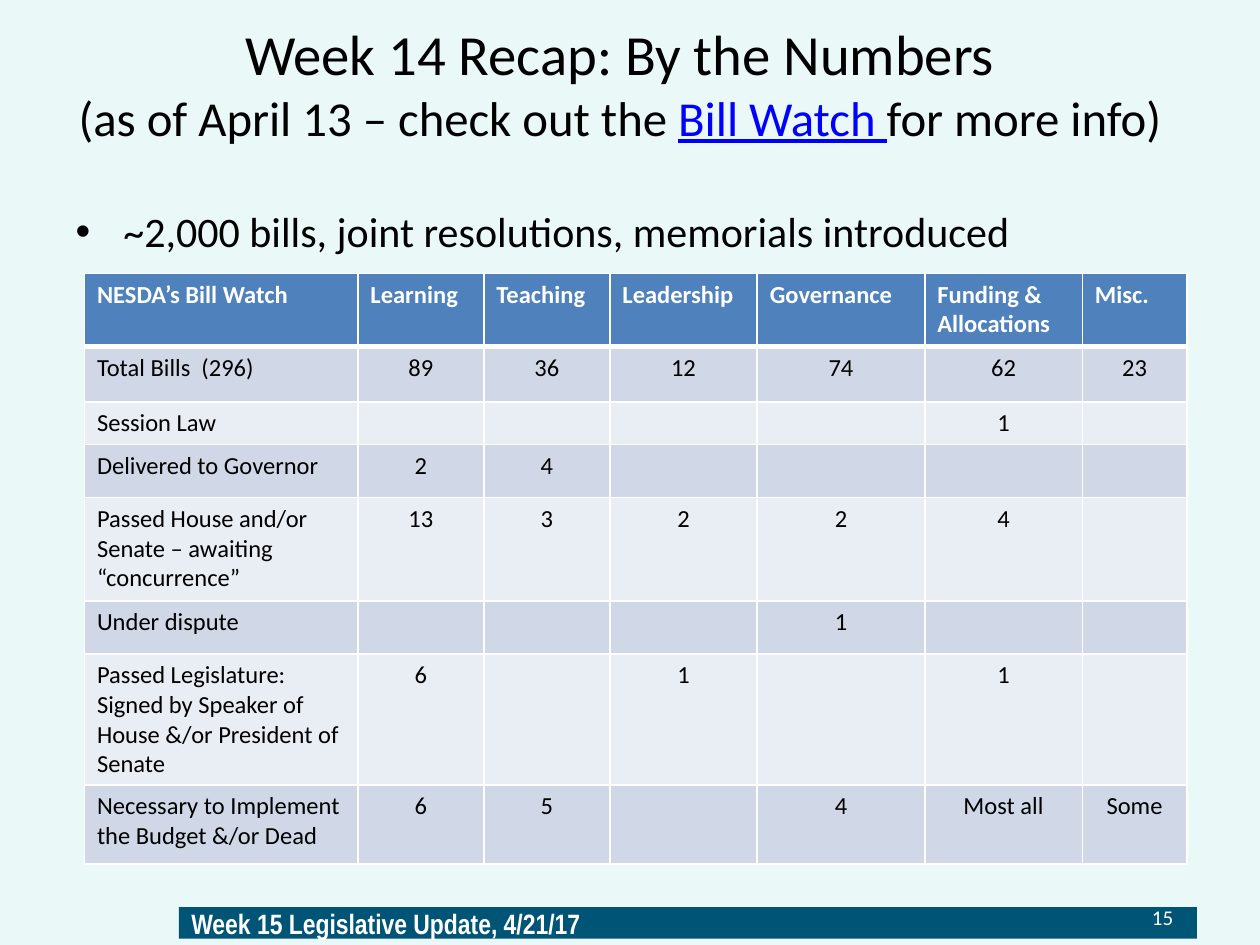
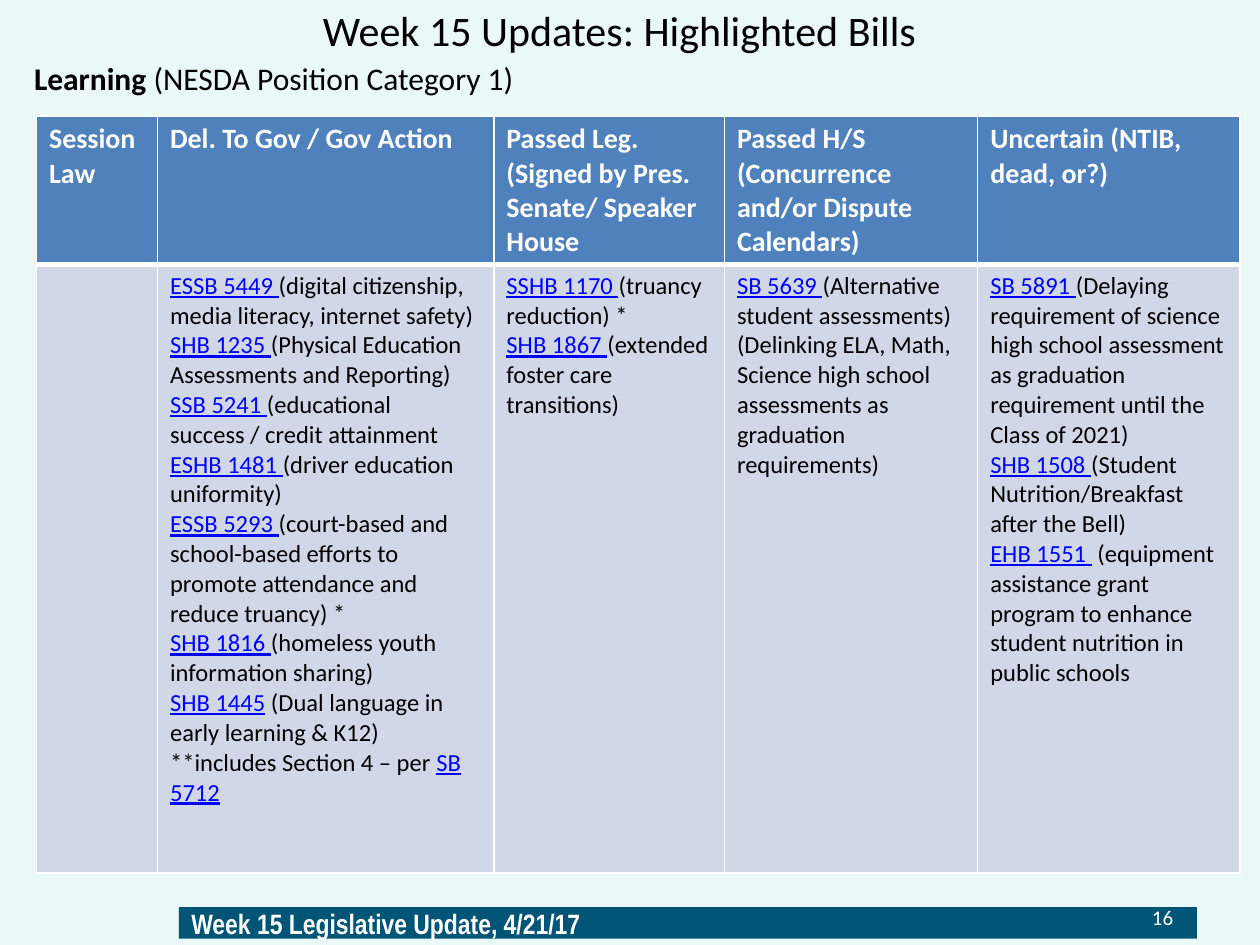
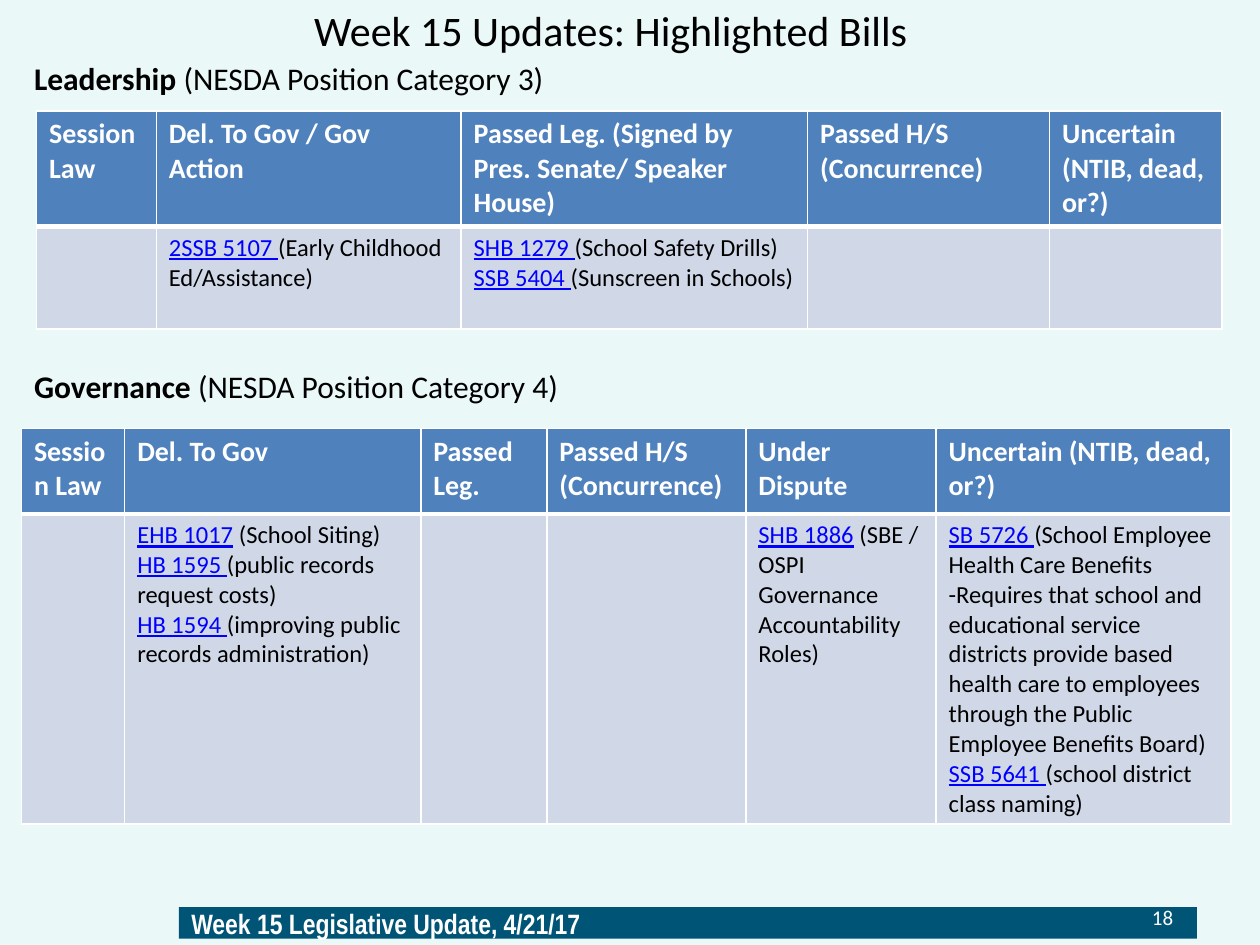
from lxml.etree import SubElement
from pptx import Presentation
from pptx.dml.color import RGBColor
from pptx.enum.shapes import MSO_SHAPE as Shape
from pptx.enum.text import MSO_ANCHOR as Anchor, MSO_AUTO_SIZE as AutoSize, PP_ALIGN as Align
from pptx.oxml import parse_xml
from pptx.oxml.ns import nsdecls, qn
from pptx.util import Inches, Pt

COLORS = {
    "background": "EAF8F8",
    "band": "005476",
    "header": "4F81BD",
    "odd_row": "D0D8E8",
    "even_row": "E9EDF4",
    "link": "0000FF",
    "text": "000000",
    "white": "FFFFFF",
}
FONT, BAND_FONT = "Calibri", "Arial Narrow"
FOOTER = "Week 15 Legislative Update, 4/21/17"
BILLS_TITLE = "Week 15 Updates: Highlighted Bills "

SUMMARY_COLUMNS = [2.17, 1, 1, 1.17, 1.33, 1.25, 0.83]
SUMMARY_HEIGHTS = [0.58, 0.44, 0.34, 0.42, 0.82, 0.42, 1.04, 0.63]
SUMMARY = [
    ["NESDA’s Bill Watch", "Learning", "Teaching", "Leadership", "Governance",
     "Funding & Allocations", "Misc."],
    ["Total Bills  (296)", "89", "36", "12", "74", "62", "23"],
    ["Session Law", "", "", "", "", "1", ""],
    ["Delivered to Governor", "2", "4", "", "", "", ""],
    ["Passed House and/or Senate – awaiting “concurrence”", "13", "3", "2", "2", "4", ""],
    ["Under dispute", "", "", "", "1", "", ""],
    ["Passed Legislature: Signed by Speaker of House &/or President of Senate",
     "6", "", "1", "", "1", ""],
    ["Necessary to Implement the Budget &/or Dead", "6", "5", "", "4", "Most all", "Some"],
]

# Bill numbers in square brackets are set in link style; each line is a paragraph
LEARNING = [
    ["Session Law", "Del. To Gov / Gov Action",
     "Passed Leg. (Signed by Pres. Senate/ Speaker House",
     "Passed H/S (Concurrence and/or Dispute Calendars)", "Uncertain (NTIB, dead, or?)"],
    ["",
     "[ESSB 5449 ](digital citizenship, media literacy, internet safety)\n"
     "[SHB 1235 ](Physical Education Assessments and Reporting)\n"
     "[SSB 5241 ](educational success / credit attainment\n"
     "[ESHB 1481 ](driver education uniformity)\n"
     "[ESSB 5293 ](court-based and school-based efforts to promote attendance "
     "and reduce truancy) *\n"
     "[SHB 1816 ](homeless youth information sharing)\n"
     "[SHB 1445] (Dual language in early learning & K12) "
     "**includes Section 4 – per [SB 5712]",
     "[SSHB 1170 ](truancy reduction) *\n"
     "[SHB 1867 ](extended foster care transitions)",
     "[SB 5639 ](Alternative student assessments) (Delinking ELA, Math, Science "
     "high school assessments as graduation requirements)",
     "[SB 5891 ](Delaying requirement of science high school assessment as "
     "graduation requirement until the Class of 2021)\n"
     "[SHB 1508 ](Student Nutrition/Breakfast after the Bell)\n"
     "[EHB 1551 ] (equipment assistance grant program to enhance student "
     "nutrition in public schools"],
]
LEADERSHIP = [
    ["Session Law", "Del. To Gov / Gov Action",
     "Passed Leg. (Signed by Pres. Senate/ Speaker House)",
     "Passed H/S (Concurrence)", "Uncertain (NTIB, dead, or?)"],
    ["", "[2SSB 5107 ](Early Childhood Ed/Assistance)",
     "[SHB 1279 ](School Safety Drills)\n[SSB 5404 ](Sunscreen in Schools)", "", ""],
]
GOVERNANCE = [
    ["Session Law", "Del. To Gov", "Passed Leg.", "Passed H/S (Concurrence)",
     "Under Dispute", "Uncertain (NTIB, dead, or?)"],
    ["",
     "[EHB 1017] (School Siting)\n"
     "[HB 1595 ](public records request costs)\n"
     "[HB 1594 ](improving public records administration)",
     "", "",
     "[SHB 1886] (SBE / OSPI Governance Accountability Roles)",
     "[SB 5726 ](School Employee Health Care Benefits -Requires that school and "
     "educational service districts provide based health care to employees "
     "through the Public Employee Benefits Board)\n"
     "[SSB 5641 ](school district class naming)"],
]


def color(name):
    return RGBColor.from_string(COLORS[name])


def add_span(para, text, size, ink="text", bold=False, font=FONT):
    span = para.add_run()
    span.text = text
    span.font.name, span.font.size, span.font.bold = font, Pt(size), bold
    span.font.color.rgb = color(ink)
    return span


def add_linked_text(para, text, size, ink="text", bold=False):
    """Add text whose bracketed parts look like links."""
    for index, part in enumerate(text.replace("]", "[").split("[")):
        if part:
            linked = index % 2 == 1
            span = add_span(para, part, size, "link" if linked else ink, bold)
            if linked:
                span.font.underline = True


def move(shape, box):
    shape.left, shape.top, shape.width, shape.height = map(Inches, box)


def prepare_placeholder(shape, box, anchor):
    move(shape, box)
    frame = shape.text_frame
    frame.auto_size, frame.vertical_anchor = AutoSize.NONE, anchor
    frame.word_wrap = True
    return frame


# Title and body
def add_title(page, box, lines):
    para = prepare_placeholder(page.shapes.title, box, Anchor.MIDDLE).paragraphs[0]
    para.alignment = Align.CENTER
    for index, (text, size) in enumerate(lines):
        if index:
            para.add_line_break()
        add_linked_text(para, text, size)


def set_bullet(para, indent=0):
    props = para._p.get_or_add_pPr()
    props.set("marL", str(Inches(indent)))
    props.set("indent", str(-Inches(indent)))
    if indent:
        SubElement(props, qn("a:buChar"), char="•")
    else:
        SubElement(props, qn("a:buNone"))


def add_category_headings(page, headings):
    frame = prepare_placeholder(page.placeholders[1], (0.17, 0.42, 9.67, 6.67), Anchor.TOP)
    for index, (name, category) in enumerate(headings):
        para = frame.add_paragraph() if index else frame.paragraphs[0]
        if index:
            para.space_before = Pt(154)
        set_bullet(para)
        add_span(para, name + " ", 18, bold=True)
        add_span(para, f"(NESDA Position Category {category})", 18)


# Footer band and page number
def add_footer(page, number):
    band = page.shapes.add_shape(Shape.RECTANGLE, *map(Inches, (1.42, 7.2, 8.08, 0.25)))
    band.shadow.inherit = False
    band.fill.solid()
    band.fill.fore_color.rgb = color("band")
    band.line.fill.background()
    frame = band.text_frame
    frame.vertical_anchor = Anchor.MIDDLE
    frame.paragraphs[0].alignment = Align.LEFT
    add_span(frame.paragraphs[0], FOOTER, 16, "white", True, BAND_FONT)

    label = page.shapes.add_textbox(*map(Inches, (7.08, 7.08, 2.33, 0.4))).text_frame
    label.word_wrap, label.vertical_anchor = True, Anchor.MIDDLE
    label.paragraphs[0].alignment = Align.RIGHT
    add_span(label.paragraphs[0], str(number), 12, "white")


# Tables
def set_borders(cell, top, bottom):
    props = cell._tc.get_or_add_tcPr()
    widths = {"lnL": 1, "lnR": 1, "lnT": top, "lnB": bottom}
    for index, (side, width) in enumerate(widths.items()):
        props.insert(index, parse_xml(
            f'<a:{side} {nsdecls("a")} w="{Pt(width)}"><a:solidFill>'
            f'<a:srgbClr val="{COLORS["white"]}"/></a:solidFill></a:{side}>'))


def fill_cell(cell, text, row, size, centered):
    is_header = row == 0
    cell.fill.solid()
    cell.fill.fore_color.rgb = color(
        "header" if is_header else "odd_row" if row % 2 else "even_row")
    set_borders(cell, top=3 if row == 1 else 1, bottom=3 if is_header else 1)
    frame = cell.text_frame
    for index, line in enumerate(text.split("\n")):
        para = frame.add_paragraph() if index else frame.paragraphs[0]
        if centered:
            para.alignment = Align.CENTER
        if line:
            add_linked_text(para, line, size, "white" if is_header else "text", is_header)
        else:
            SubElement(para._p, qn("a:endParaRPr"), sz=str(size * 100))


def add_bill_table(page, left, top, widths, heights, rows, header_size=16, center_counts=False):
    box = (left, top, sum(widths), sum(heights))
    table = page.shapes.add_table(len(rows), len(widths), *map(Inches, box)).table
    for column, width in zip(table.columns, widths):
        column.width = Inches(width)
    for row, (values, height) in enumerate(zip(rows, heights)):
        table.rows[row].height = Inches(height)
        size = 14 if row else header_size
        for col, text in enumerate(values):
            centered = center_counts and row > 0 and col > 0
            fill_cell(table.cell(row, col), text, row, size, centered)


# Slides
def add_page(deck, number):
    page = deck.slides.add_slide(deck.slide_layouts[1])
    add_footer(page, number)
    return page


def add_summary_page(deck):
    page = add_page(deck, 15)
    add_title(page, (0.42, 0.22, 9, 0.87), [
        ("Week 14 Recap: By the Numbers", 32.4),
        ("(as of April 13 – check out the [Bill Watch ]for more info)", 27.9)])
    frame = prepare_placeholder(page.placeholders[1], (0.5, 1.58, 9.25, 5.12), Anchor.TOP)
    para = frame.paragraphs[0]
    set_bullet(para, 0.38)
    add_span(para, "~2,000 bills, joint resolutions, memorials introduced", 24)
    add_bill_table(page, 0.67, 2.17, SUMMARY_COLUMNS, SUMMARY_HEIGHTS, SUMMARY,
                   header_size=14, center_counts=True)


def add_bills_page(deck, number, title_left, headings, tables):
    page = add_page(deck, number)
    add_title(page, (title_left, -0.2, 9.75, 0.87), [(BILLS_TITLE, 24)])
    add_category_headings(page, headings)
    for table in tables:
        add_bill_table(page, *table)


def main():
    deck = Presentation()
    deck.slide_width, deck.slide_height = Inches(10), Inches(7.5)
    backdrop = deck.slide_master.background.fill
    backdrop.solid()
    backdrop.fore_color.rgb = color("background")

    add_summary_page(deck)
    add_bills_page(deck, 16, 0.08, [("Learning", 1)], [
        (0.29, 0.92, [0.96, 2.67, 1.83, 2.01, 2.08], [1.18, 4.83], LEARNING)])
    add_bills_page(deck, 18, 0.01, [("Leadership", 3), ("Governance", 4)], [
        (0.29, 0.88, [0.95, 2.42, 2.75, 1.92, 1.37], [0.92, 0.81], LEADERSHIP),
        (0.17, 3.4, [0.82, 2.35, 1, 1.58, 1.51, 2.34], [0.68, 2.46], GOVERNANCE)])
    deck.save("out.pptx")


if __name__ == "__main__":
    main()
